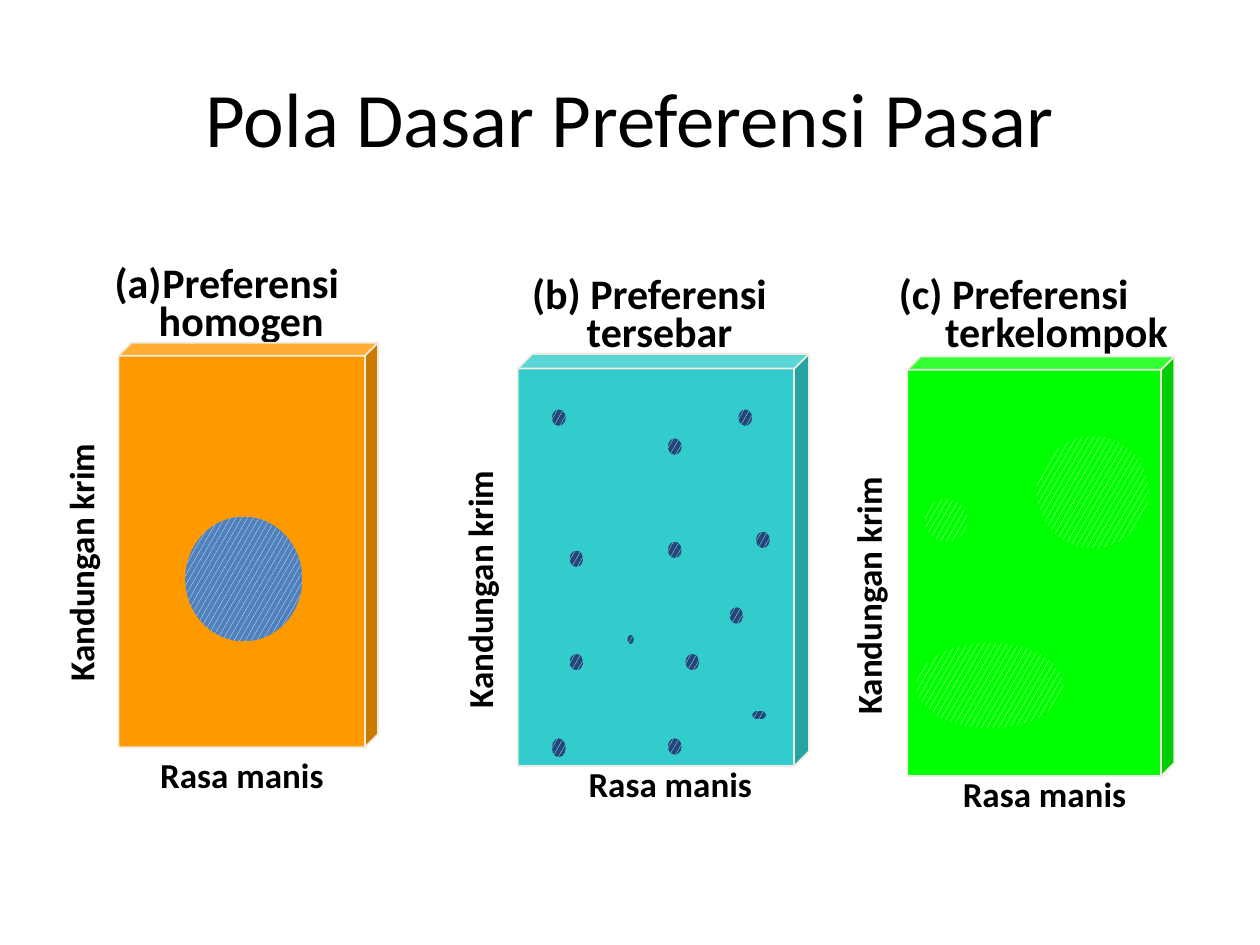
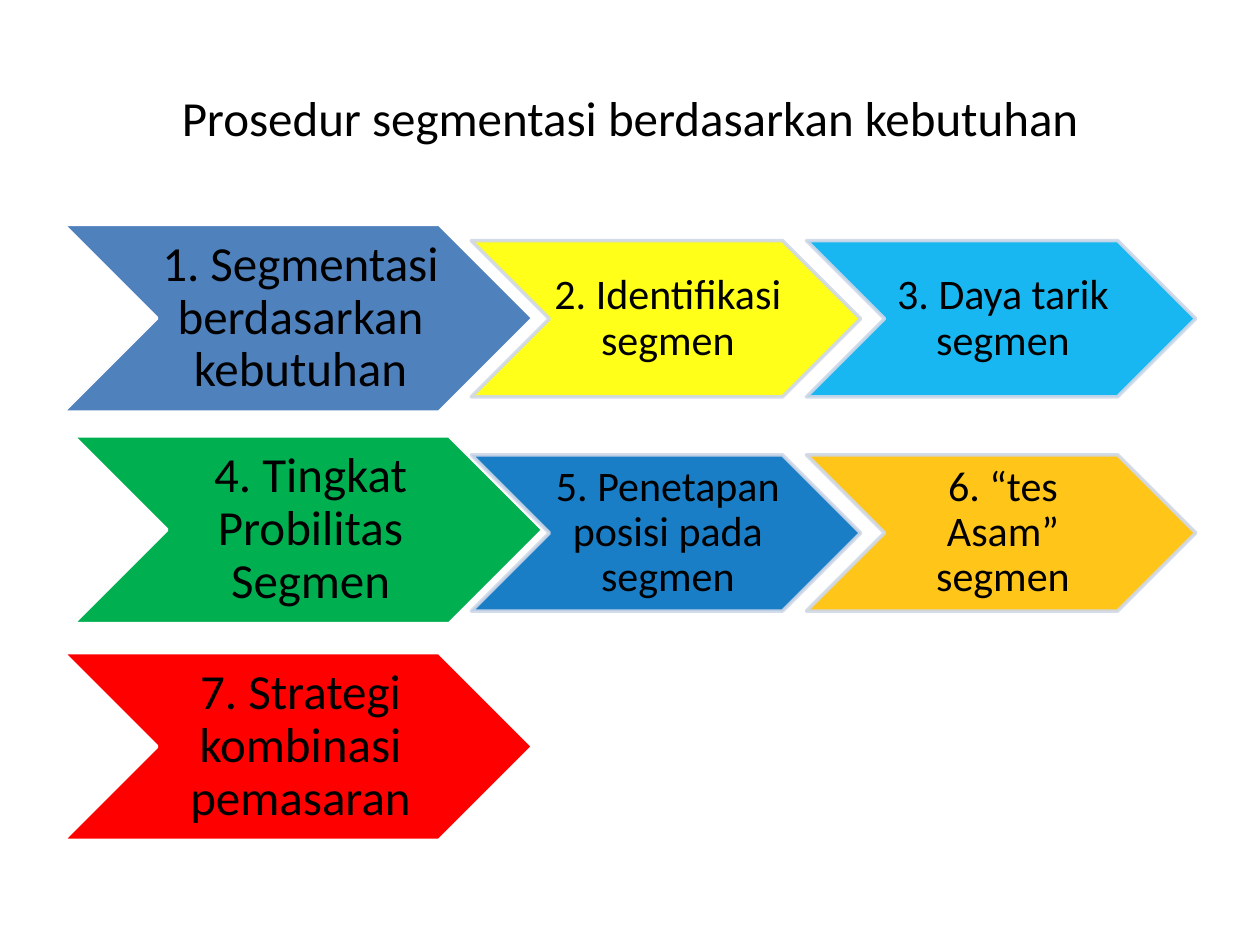
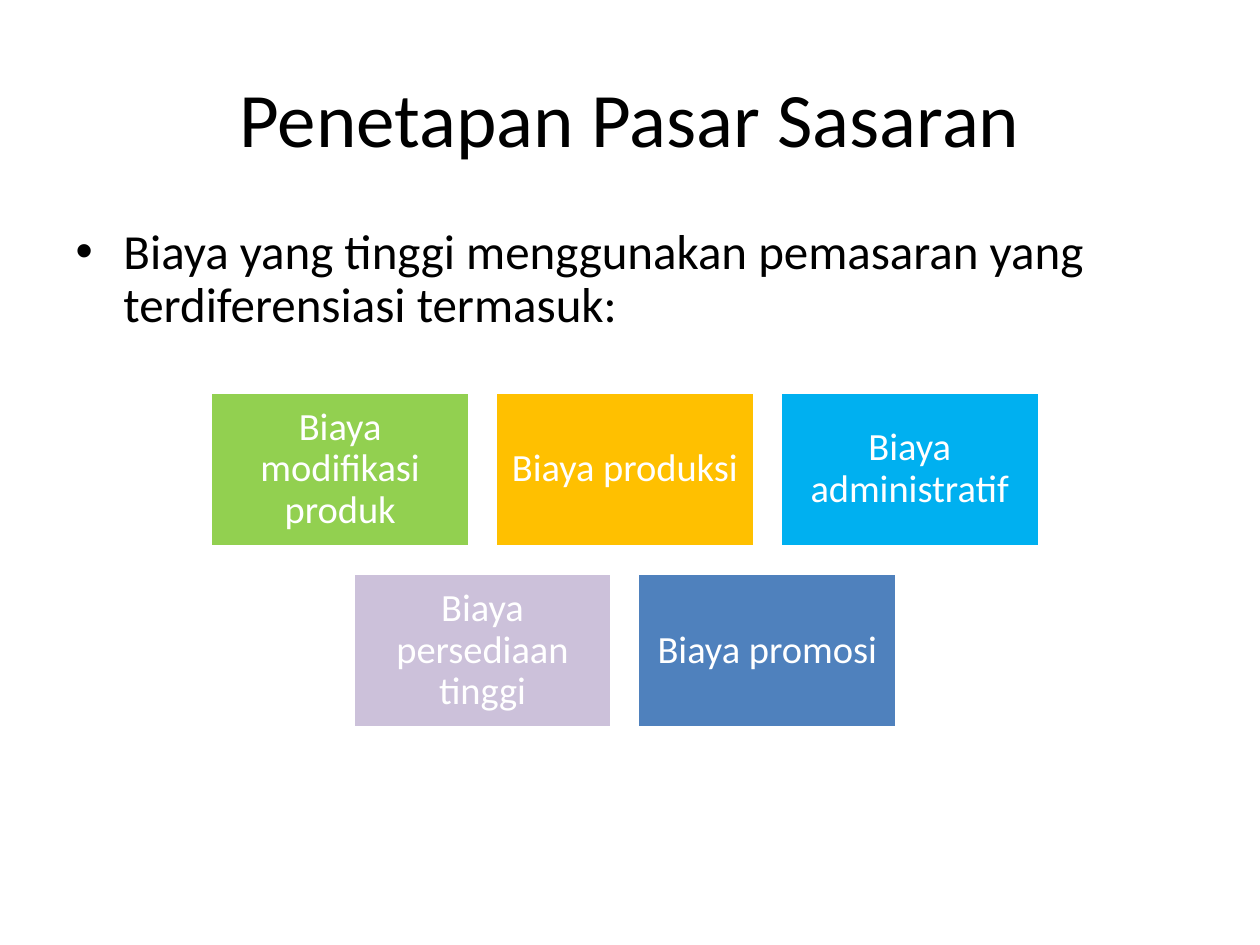
from lxml import etree
from pptx import Presentation
from pptx.dml.color import RGBColor
from pptx.enum.dml import MSO_PATTERN
from pptx.enum.shapes import MSO_SHAPE
from pptx.enum.text import MSO_ANCHOR, MSO_AUTO_SIZE, PP_ALIGN
from pptx.oxml.ns import qn
from pptx.util import Inches, Pt

FONT = "Calibri"
BLACK = RGBColor(0x00, 0x00, 0x00)
WHITE = RGBColor(0xFF, 0xFF, 0xFF)
CREAM = RGBColor(0xEE, 0xEC, 0xE1)
ORANGE = RGBColor(0xFF, 0x99, 0x00)
TEAL = RGBColor(0x33, 0xCC, 0xCC)
LIME = RGBColor(0x00, 0xFF, 0x00)
NAVY = RGBColor(0x1F, 0x49, 0x7D)
BLUE = RGBColor(0x4F, 0x81, 0xBD)
PALE = RGBColor(0xD0, 0xD8, 0xE8)
YELLOW = RGBColor(0xFF, 0xFF, 0x00)
SKY = RGBColor(0x00, 0xB0, 0xF0)
GREEN = RGBColor(0x00, 0xB0, 0x50)
AZURE = RGBColor(0x00, 0x70, 0xC0)
GOLD = RGBColor(0xFF, 0xC0, 0x00)
RED = RGBColor(0xFF, 0x00, 0x00)
LEAF = RGBColor(0x92, 0xD0, 0x50)
LILAC = RGBColor(0xCC, 0xC1, 0xDA)


def write(par, text, size, color=BLACK, bold=False, align=PP_ALIGN.CENTER, spacing=None):
    par.alignment = align
    if spacing:
        par.line_spacing = spacing
    run = par.add_run()
    run.text = text
    font = run.font
    font.name, font.size, font.bold = FONT, Pt(size), bold
    font.color.rgb = color


def draw(slide, kind, box, fill, line, weight):
    shape = slide.shapes.add_shape(kind, *map(Inches, box))
    shape.shadow.inherit = False
    shape.fill.solid()
    shape.fill.fore_color.rgb = fill
    shape.line.color.rgb = line
    shape.line.width = Pt(weight)
    return shape


deck = Presentation()
deck.slide_width, deck.slide_height = Inches(10), Inches(7.5)

# Title of every slide
slides = []
for layout, text, size in [
    (5, "Pola Dasar Preferensi Pasar", 44),
    (5, "Prosedur segmentasi berdasarkan kebutuhan", 28),
    (1, "Penetapan Pasar Sasaran", 44),
]:
    slide = deck.slides.add_slide(deck.slide_layouts[layout])
    title = slide.shapes.title
    title.left, title.top, title.width, title.height = map(Inches, (0.5, 0.3, 9, 1.25))
    title.text_frame.vertical_anchor = MSO_ANCHOR.MIDDLE
    write(title.text_frame.paragraphs[0], text, size)
    slides.append(slide)
market, steps, target = slides

# Slide 1: preference panels; each head has two lines, the second one indented
DOT = (0.11, 0.13)
dots = [(x, y, *DOT) for x, y in [
    (4.52, 5.19), (4.52, 4.37), (5.44, 5.19), (4.38, 3.25), (5.3, 4.3), (5.79, 4.82),
    (5.86, 3.25), (6, 4.22), (5.3, 3.48), (5.3, 5.86)]]
dots += [(4.38, 5.86, 0.11, 0.15), (4.98, 5.04, 0.05, 0.07), (5.97, 5.64, 0.11, 0.07)]
panels = [
    (("Preferensi", "homogen"), 0.23, (0.77, 2.08, 2.06, 0.66), (1.15, 6.01, 1.54, 0.33),
     (-0.47, 4.31, 2.25, 0.31), (0.94, 2.72, 2.06, 3.21), ORANGE,
     BLUE, [(1.47, 4.1, 0.93, 0.99)]),
    (("(b) Preferensi", "tersebar"), 0.16, (4.02, 2.17, 2.27, 0.67), (4.51, 6.08, 1.62, 0.33),
     (2.68, 4.52, 2.29, 0.32), (4.11, 2.81, 2.31, 3.27), TEAL,
     NAVY, dots),
    (("(c) Preferensi", "terkelompok"), 0.68, (6.72, 2.17, 2.65, 0.68), (7.5, 6.16, 1.58, 0.34),
     (5.74, 4.57, 2.34, 0.32), (7.2, 2.83, 2.12, 3.33), LIME,
     LIME, [(7.27, 5.1, 1.17, 0.68), (7.34, 3.96, 0.34, 0.34), (8.23, 3.46, 0.89, 0.89)]),
]
for head, indent, top, base, side, cube, color, back, spots in panels:
    for lines, box, size, turn in [
        (head, top, 24, 0),
        (["Rasa manis"], base, 20, 0),
        (["Kandungan krim"], side, 20, 270),
    ]:
        label = market.shapes.add_textbox(*map(Inches, box))
        label.rotation = turn
        frame = label.text_frame
        frame.word_wrap = False
        frame.auto_size = MSO_AUTO_SIZE.SHAPE_TO_FIT_TEXT
        for i, text in enumerate(lines):
            par = frame.add_paragraph() if i else frame.paragraphs[0]
            props = par._p.get_or_add_pPr()
            if i:
                props.set("marL", str(Inches(indent)))
            elif text == "Preferensi":
                props.set("marL", str(Inches(0.38)))
                props.set("indent", str(Inches(-0.38)))
                etree.SubElement(props, qn("a:buFontTx"))
                etree.SubElement(props, qn("a:buAutoNum"), type="alphaLcParenBoth")
            write(par, text, size, bold=True, spacing=0.75)
    block = draw(market, MSO_SHAPE.CUBE, cube, color, CREAM, 1)
    block.adjustments[0] = 0.05
    for spot in spots:
        oval = draw(market, MSO_SHAPE.OVAL, spot, back, back, 1)
        oval.line.fill.background()
        oval.fill.patterned()
        oval.fill.pattern = MSO_PATTERN.LARGE_CONFETTI
        oval.fill.fore_color.rgb = WHITE
        oval.fill.back_color.rgb = back

# Slide 2: each row has a large lead chevron and smaller followers
rows = [
    (0.5, 1.78, 1.91, [("1. Segmentasi berdasarkan kebutuhan", BLUE),
                       ("2. Identifikasi segmen", YELLOW),
                       ("3. Daya tarik segmen", SKY)]),
    (0.58, 3.46, 3.61, [("4. Tingkat Probilitas Segmen", GREEN),
                        ("5. Penetapan posisi pada segmen", AZURE),
                        ("6. “tes Asam” segmen", GOLD)]),
    (0.5, 5.18, 5.31, [("7. Strategi kombinasi pemasaran", RED)]),
]
for left, top, next_top, items in rows:
    for i, (text, color) in enumerate(items):
        if i:
            box = (3.74 + 2.66 * (i - 1), next_top, 3.09, 1.24)
        else:
            box = (left, top, 3.73, 1.49)
        arrow = draw(steps, MSO_SHAPE.CHEVRON, box, color, PALE if i else WHITE, 2)
        if i:
            for tint in arrow._element.spPr.iter(qn("a:srgbClr")):
                etree.SubElement(tint, qn("a:alpha"), val="90000")
        frame = arrow.text_frame
        frame.word_wrap = True
        frame.vertical_anchor = MSO_ANCHOR.MIDDLE
        frame.margin_left, frame.margin_right = Inches(0.03 if i else 0.04), 0
        frame.margin_top = frame.margin_bottom = Inches(0.02)
        write(frame.paragraphs[0], text, 24 if i else 28, spacing=0.9)

# Slide 3: lead sentence and centred rows of cost tiles
body = target.placeholders[1]
body.left, body.top, body.width, body.height = map(Inches, (0.5, 1.75, 9, 4.95))
body.text_frame.auto_size = MSO_AUTO_SIZE.NONE
par = body.text_frame.paragraphs[0]
props = par._p.get_or_add_pPr()
props.set("marL", str(Inches(0.38)))
props.set("indent", str(Inches(-0.38)))
etree.SubElement(props, qn("a:buChar"), char="•")
par.space_before = Pt(0)
write(par, "Biaya yang tinggi menggunakan pemasaran yang terdiferensiasi termasuk:",
      28, align=PP_ALIGN.LEFT, spacing=0.9)

costs = [
    (1.67, [("Biaya modifikasi produk", LEAF), ("Biaya produksi", GOLD),
            ("Biaya administratif", SKY)]),
    (2.8, [("Biaya persediaan tinggi", LILAC), ("Biaya promosi", BLUE)]),
]
for r, (left, items) in enumerate(costs):
    for c, (text, color) in enumerate(items):
        box = (left + 2.26 * c, 3.11 + 1.44 * r, 2.06, 1.23)
        tile = draw(target, MSO_SHAPE.RECTANGLE, box, color, WHITE, 2)
        frame = tile.text_frame
        frame.word_wrap = True
        frame.vertical_anchor = MSO_ANCHOR.MIDDLE
        frame.margin_left = frame.margin_right = Inches(0.09)
        frame.margin_top = frame.margin_bottom = Inches(0.09)
        write(frame.paragraphs[0], text, 22, WHITE, spacing=0.9)

deck.save("out.pptx")
